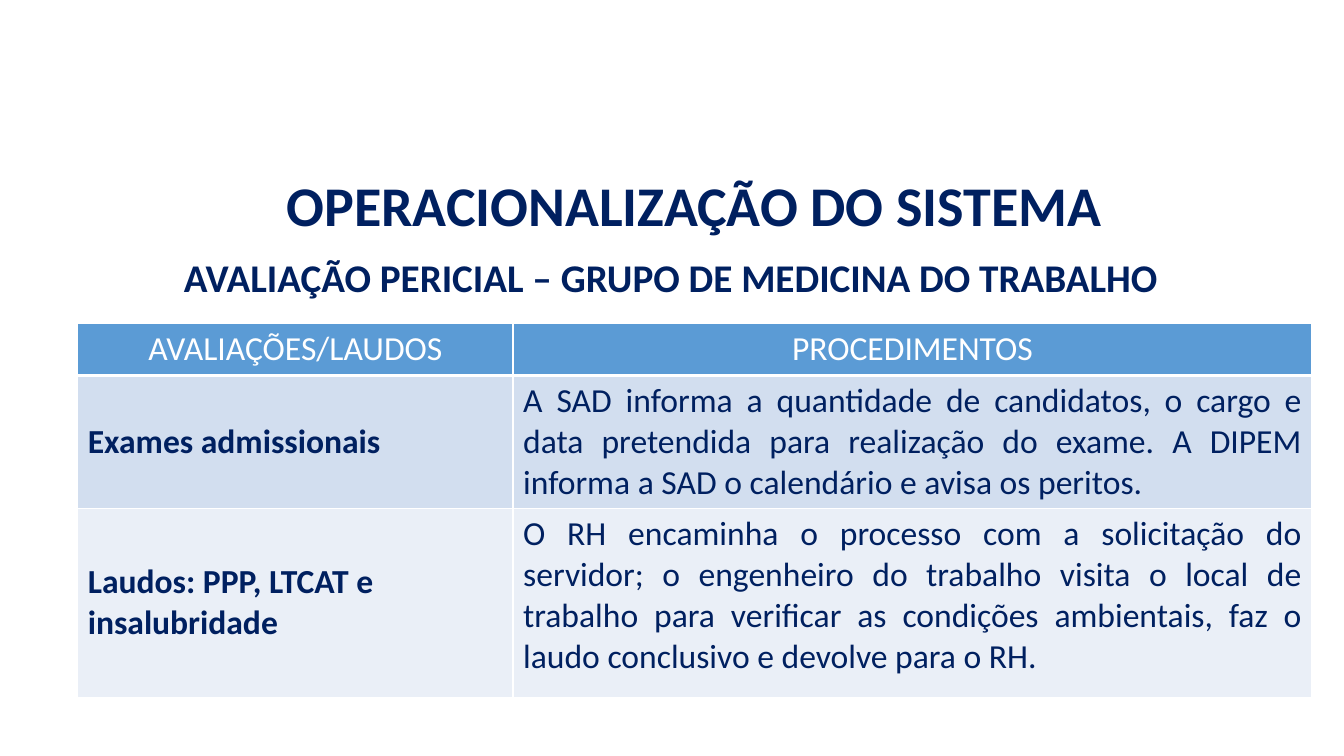
from lxml import etree
from pptx import Presentation
from pptx import util as u
from pptx.dml.color import RGBColor
from pptx.enum import text
from pptx.oxml.ns import qn

COLORS = {
    "navy": "002060",
    "white": "FFFFFF",
    "header": "5B9BD5",
    "band_dark": "D2DEEF",
    "band_light": "EAEFF7",
}
FONT = "Calibri"
ALIGN = text.PP_ALIGN
HEADERS = ("AVALIAÇÕES/LAUDOS", "PROCEDIMENTOS")
PROCEDURES = (
    ("Exames admissionais",
     "A SAD informa a quantidade de candidatos, o cargo e data pretendida para "
     "realização do exame. A DIPEM informa a SAD o calendário e avisa os peritos."),
    ("Laudos: PPP, LTCAT e insalubridade",
     "O RH encaminha o processo com a solicitação do servidor; o engenheiro do "
     "trabalho visita o local de trabalho para verificar as condições ambientais, "
     "faz o laudo conclusivo e devolve para o RH."),
)


def style_paragraph(paragraph, size, color, bold, align):
    """Set the font and alignment of one paragraph."""
    paragraph.alignment = align
    font = paragraph.font
    font.name, font.size, font.bold = FONT, u.Pt(size), bold
    font.color.rgb = RGBColor.from_string(COLORS[color])


def add_heading(slide, box, wording, size, anchor):
    """Place a bold centred heading in the given box."""
    frame = slide.shapes.add_textbox(*box).text_frame
    frame.word_wrap = True
    frame.vertical_anchor = anchor
    heading = frame.paragraphs[0]
    heading.text = wording
    heading.line_spacing = 0.9
    style_paragraph(heading, size, "navy", True, ALIGN.CENTER)


def add_borders(cell, bottom_width):
    """Draw white borders around a cell, with its own bottom width."""
    properties = cell._tc.get_or_add_tcPr()
    for side, width in (("L", 1), ("R", 1), ("T", 1), ("B", bottom_width)):
        line = etree.SubElement(properties, qn(f"a:ln{side}"), w=str(u.Pt(width)))
        fill = etree.SubElement(line, qn("a:solidFill"))
        etree.SubElement(fill, qn("a:srgbClr"), val=COLORS["white"])


def fill_cell(cell, wording, fill, color, bold, align, anchor, bottom_width=1):
    """Write and format one table cell."""
    add_borders(cell, bottom_width)
    cell.fill.solid()
    cell.fill.fore_color.rgb = RGBColor.from_string(COLORS[fill])
    cell.vertical_anchor = anchor
    cell.text = wording
    style_paragraph(cell.text_frame.paragraphs[0], 24, color, bold, align)


def add_procedures(slide, box):
    """Place the table of assessments and procedures in the given box."""
    left, top, width, height = box
    row_heights = (u.Cm(1.32), u.Cm(3.35), height - u.Cm(4.67))
    column_widths = (u.Cm(10.97), width - u.Cm(10.97))
    table = slide.shapes.add_table(len(row_heights), len(column_widths), *box).table
    for row, row_height in zip(table.rows, row_heights):
        row.height = row_height
    for column, column_width in zip(table.columns, column_widths):
        column.width = column_width

    middle, upper = text.MSO_ANCHOR.MIDDLE, text.MSO_ANCHOR.TOP
    for index, header in enumerate(HEADERS):
        fill_cell(table.cell(0, index), header, "header", "white", False,
                  ALIGN.CENTER, middle, bottom_width=3)
    bands = ("band_dark", "band_light")
    for index, ((assessment, procedure), band) in enumerate(zip(PROCEDURES, bands), 1):
        fill_cell(table.cell(index, 0), assessment, band, "navy", True, ALIGN.LEFT, middle)
        fill_cell(table.cell(index, 1), procedure, band, "navy", False, ALIGN.JUSTIFY, upper)


def main():
    """Build the slide and save it."""
    deck = Presentation()
    deck.slide_width, deck.slide_height = u.Cm(33.87), u.Cm(19.05)
    slide = deck.slides.add_slide(deck.slide_layouts[6])
    title_box = (u.Cm(3.1), u.Cm(4.09), u.Cm(28.78), u.Cm(2.34))
    subtitle_box = (u.Cm(2.51), u.Cm(6.4), u.Cm(28.78), u.Cm(11.35))
    table_box = (u.Cm(1.96), u.Cm(8.14), u.Cm(31.1), u.Cm(9.44))
    add_heading(slide, title_box, "OPERACIONALIZAÇÃO DO SISTEMA", 40,
                text.MSO_ANCHOR.MIDDLE)
    add_heading(slide, subtitle_box,
                "AVALIAÇÃO PERICIAL – GRUPO DE MEDICINA DO TRABALHO", 28,
                text.MSO_ANCHOR.TOP)
    add_procedures(slide, table_box)
    deck.save("out.pptx")


if __name__ == "__main__":
    main()
